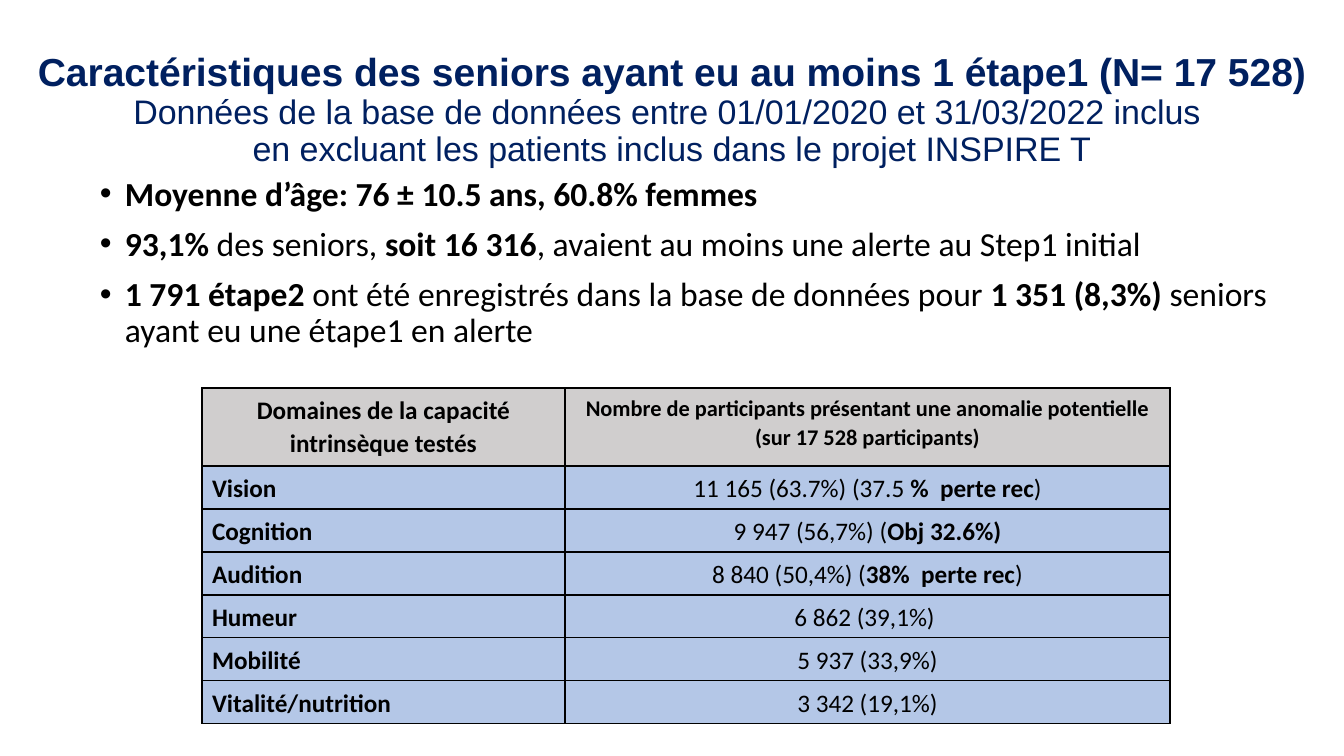
from lxml import etree
from pptx import Presentation
from pptx.dml.color import RGBColor
from pptx.enum.text import MSO_ANCHOR, PP_ALIGN
from pptx.oxml.ns import qn
from pptx.util import Pt

CENTER, LEFT = PP_ALIGN.CENTER, PP_ALIGN.LEFT
MIDDLE = MSO_ANCHOR.MIDDLE
SCALE = 914400 / 100.8
COLORS = {"navy": "002060", "black": "000000", "gray": "D0CECE", "blue": "B4C7E7"}

TITLE = (
    "Caractéristiques des seniors ayant eu au moins 1 étape1 (N= 17 528)",
    "Données de la base de données entre 01/01/2020 et 31/03/2022 inclus ",
    "en excluant les patients inclus dans le projet INSPIRE T",
)
# Text between ** marks is bold.
FACTS = (
    "**Moyenne d’âge: 76 ± 10.5 ans, 60.8% femmes**",
    "**93,1%** des seniors, **soit 16 316**, avaient au moins une alerte au Step1 initial",
    "**1 791 étape2 **ont été enregistrés dans la base de données pour "
    "**1 351 (8,3%) **seniors ayant eu une étape1 en alerte",
)
HEADS = (
    ("**Domaines de la capacité intrinsèque testés**", 18),
    ("**Nombre de participants présentant une anomalie potentielle "
     "(sur 17 528 participants)**", 16),
)
DOMAINS = (
    ("Vision", "11 165 (63.7%) (37.5 **%  perte rec**)"),
    ("Cognition", "9 947 (56,7%) (**Obj 32.6%)**"),
    ("Audition", "8 840 (50,4%) (**38%  perte rec**)"),
    ("Humeur", "6 862 (39,1%) "),
    ("Mobilité", "5 937 (33,9%)"),
    ("Vitalité/nutrition", "3 342 (19,1%)"),
)


def px(n):
    return round(n * SCALE)


def rgb(name):
    return RGBColor.from_string(COLORS[name])


def style(run, size, bold, color="black", face="Calibri"):
    font = run.font
    font.size, font.bold, font.name = Pt(size), bold, face
    font.color.rgb = rgb(color)


def fill_runs(para, text, size):
    """Add the text as runs, bold between ** marks."""
    for i, part in enumerate(text.split("**")):
        if part:
            run = para.add_run()
            run.text = part
            style(run, size, i % 2 == 1)


def add_box(slide, x, y, w, h):
    frame = slide.shapes.add_textbox(px(x), px(y), px(w), px(h)).text_frame
    frame.word_wrap = True
    return frame


def add_title(slide):
    frame = add_box(slide, 0, 50, 1344, 122)
    frame.vertical_anchor = MIDDLE
    para = frame.paragraphs[0]
    para.text = "\v".join(TITLE)
    para.alignment, para.line_spacing = CENTER, 0.9
    for i, run in enumerate(para.runs):
        style(run, 24.3 if i else 27.9, i == 0, "navy", "Arial")


def add_bullet(para):
    props = para._p.get_or_add_pPr()
    props.set("marL", str(px(25)))
    props.set("indent", str(-px(25)))
    etree.SubElement(props, qn("a:buFont"), typeface="Arial")
    etree.SubElement(props, qn("a:buChar"), char="•")


def add_facts(slide):
    frame = add_box(slide, 90, 172, 1223, 136)
    for i, fact in enumerate(FACTS):
        para = frame.add_paragraph() if i else frame.paragraphs[0]
        para.line_spacing, para.space_before = 0.9, Pt(10)
        add_bullet(para)
        fill_runs(para, fact, 24)


def add_borders(cell):
    props = cell._tc.get_or_add_tcPr()
    for i, side in enumerate(("lnL", "lnR", "lnT", "lnB")):
        line = etree.Element(qn("a:" + side), w=str(Pt(1)))
        solid = etree.SubElement(line, qn("a:solidFill"))
        etree.SubElement(solid, qn("a:srgbClr"), val=COLORS["black"])
        props.insert(i, line)


def set_cell(cell, text, size, fill, align):
    cell.fill.solid()
    cell.fill.fore_color.rgb = rgb(fill)
    add_borders(cell)
    para = cell.text_frame.paragraphs[0]
    para.alignment, para.line_spacing = align, 1.07
    fill_runs(para, text, size)


def add_domains(slide):
    frame = slide.shapes.add_table(
        len(DOMAINS) + 1, 2, px(202), px(388), px(968), px(336))
    table = frame.table
    table.first_row = table.horz_banding = False
    for col, width in zip(table.columns, (363, 605)):
        col.width = px(width)
    for i, row in enumerate(table.rows):
        row.height = px(43 if i else 78)
    for j, (head, size) in enumerate(HEADS):
        set_cell(table.cell(0, j), head, size, "gray", CENTER)
    for i, (domain, count) in enumerate(DOMAINS, 1):
        set_cell(table.cell(i, 0), f"**{domain}**", 18, "blue", LEFT)
        set_cell(table.cell(i, 1), count, 18, "blue", CENTER)


def main():
    prs = Presentation()
    prs.slide_width, prs.slide_height = px(1344), px(756)
    slide = prs.slides.add_slide(prs.slide_layouts[6])
    add_title(slide)
    add_facts(slide)
    add_domains(slide)
    prs.save("out.pptx")


if __name__ == "__main__":
    main()
